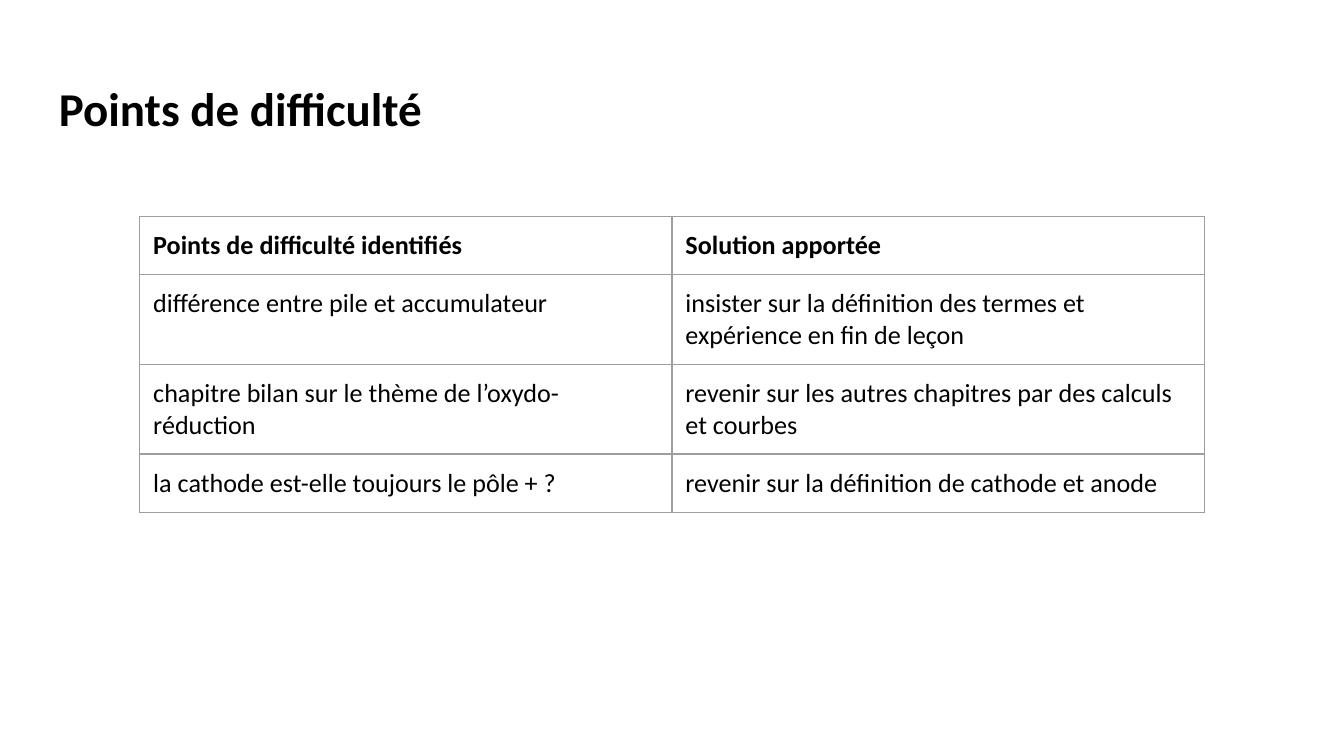
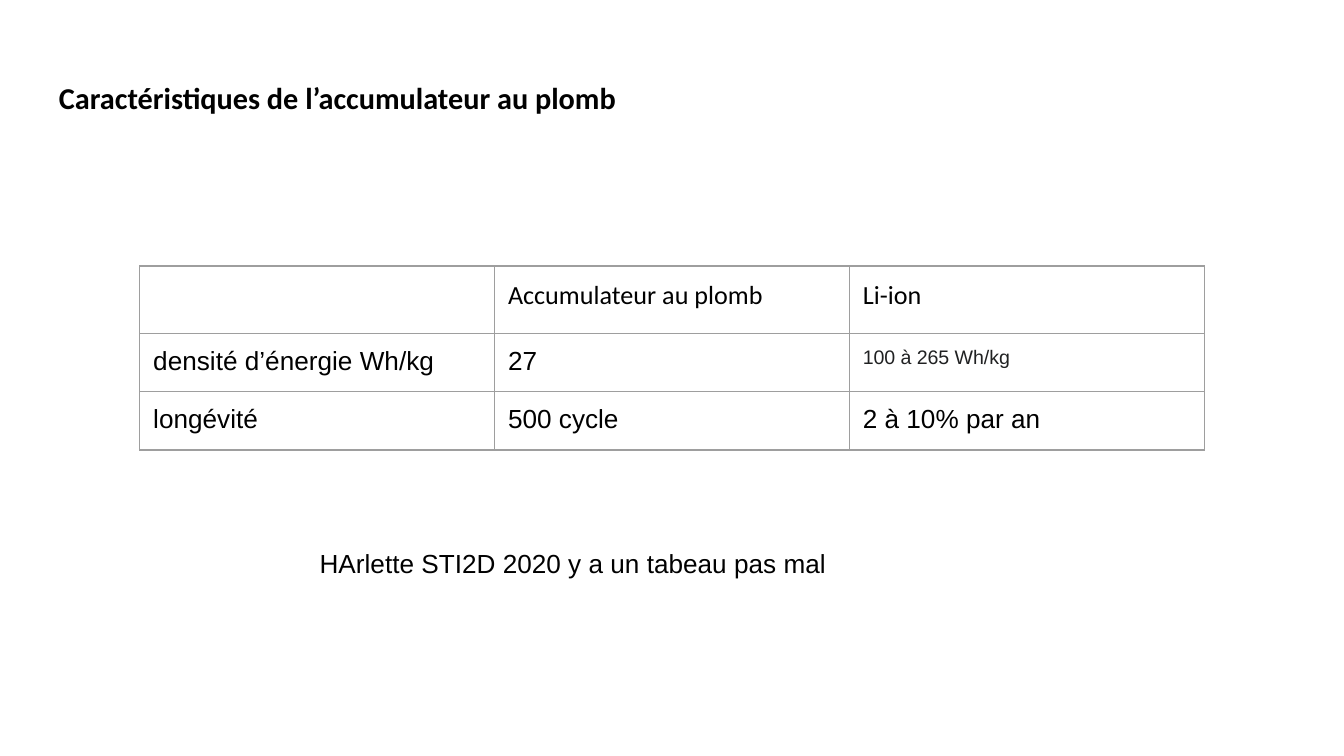
from lxml.etree import SubElement
from pptx import Presentation
from pptx.dml.color import RGBColor
from pptx.enum.text import MSO_ANCHOR
from pptx.oxml.ns import qn
from pptx.util import Inches, Pt

BLACK, INK, GREY, WHITE = "000000", "202122", "9E9E9E", "FFFFFF"
HEAD_FONT, BODY_FONT = "Calibri", "Arial"
BODY_SIZE, EMPTY_SIZE = 14, 18
INSET = 0.1
SLIDE_WIDTH = 10
SLIDE_HEIGHT = SLIDE_WIDTH * 9 / 16
TITLE_BOX = (0.34, 0.49, 9.32, 0.63)
TABLE_LEFT, TABLE_WIDTH, ROW_HEIGHT = 1.04, 7.92, 0.42


def rgb(value):
    return RGBColor.from_string(value)


def add_run(p, text, font=HEAD_FONT, size=BODY_SIZE, color=BLACK, bold=False):
    r = p.add_run()
    r.text = text
    r.font.name = font
    r.font.size = Pt(size)
    r.font.bold = bold
    r.font.color.rgb = rgb(color)


def set_insets(holder):
    holder.margin_left = holder.margin_right = Inches(INSET)
    holder.margin_top = holder.margin_bottom = Inches(INSET)


def add_text(s, box, text, **style):
    tf = s.shapes.add_textbox(*map(Inches, box)).text_frame
    tf.word_wrap = True
    tf.vertical_anchor = MSO_ANCHOR.TOP
    set_insets(tf)
    add_run(tf.paragraphs[0], text, **style)


def add_borders(cell):
    tc_pr = cell._tc.get_or_add_tcPr()
    for i, side in enumerate(("lnL", "lnR", "lnT", "lnB")):
        ln = tc_pr.makeelement(qn(f"a:{side}"), {"w": str(Pt(0.75))})
        fill = SubElement(ln, qn("a:solidFill"))
        SubElement(fill, qn("a:srgbClr"), val=GREY)
        tc_pr.insert(i, ln)


def style_empty(p):
    end = SubElement(p._p, qn("a:endParaRPr"), sz=str(EMPTY_SIZE * 100))
    SubElement(end, qn("a:latin"), typeface=BODY_FONT)


def add_grid(s, top, rows, style_of):
    n_rows, n_cols = len(rows), len(rows[0])
    box = (TABLE_LEFT, top, TABLE_WIDTH, ROW_HEIGHT * n_rows)
    table = s.shapes.add_table(n_rows, n_cols, *map(Inches, box)).table
    table.first_row = table.horz_banding = False
    for col in table.columns:
        col.width = Inches(TABLE_WIDTH / n_cols)
    for i, row in enumerate(rows):
        table.rows[i].height = Inches(ROW_HEIGHT)
        for j, text in enumerate(row):
            cell = table.cell(i, j)
            set_insets(cell)
            cell.fill.background()
            add_borders(cell)
            p = cell.text_frame.paragraphs[0]
            if text:
                add_run(p, text, **style_of(i, j))
            else:
                style_empty(p)


def add_slide(prs, title, size):
    s = prs.slides.add_slide(prs.slide_layouts[6])
    s.background.fill.solid()
    s.background.fill.fore_color.rgb = rgb(WHITE)
    add_text(s, TITLE_BOX, title, size=size, bold=True)
    return s


def difficulty_slide(prs):
    s = add_slide(prs, "Points de difficulté", 25.2)
    rows = [
        ("Points de difficulté identifiés", "Solution apportée"),
        ("différence entre pile et accumulateur",
         "insister sur la définition des termes et expérience en fin de leçon"),
        ("chapitre bilan sur le thème de l’oxydo-réduction",
         "revenir sur les autres chapitres par des calculs et courbes"),
        ("la cathode est-elle toujours le pôle + ?",
         "revenir sur la définition de cathode et anode"),
    ]
    add_grid(s, 1.61, rows, lambda i, j: {"bold": i == 0})


def battery_style(i, j):
    if i == 0:
        return {}
    if (i, j) == (1, 2):
        return {"font": BODY_FONT, "size": 10.5, "color": INK}
    return {"font": BODY_FONT}


def battery_slide(prs):
    s = add_slide(prs, "Caractéristiques de l’accumulateur au plomb", 16.2)
    rows = [
        ("", "Accumulateur au plomb", "Li-ion"),
        ("densité d’énergie Wh/kg", "27", "100 à 265 Wh/kg"),
        ("longévité", "500 cycle", "2 à 10% par an"),
    ]
    add_grid(s, 1.98, rows, battery_style)
    add_text(s, (2.28, 3.97, 4.44, 0.44),
             "HArlette STI2D 2020 y a un tabeau pas mal", font=BODY_FONT)


def main():
    prs = Presentation()
    prs.slide_width, prs.slide_height = Inches(SLIDE_WIDTH), Inches(SLIDE_HEIGHT)
    difficulty_slide(prs)
    battery_slide(prs)
    prs.save("out.pptx")


if __name__ == "__main__":
    main()
